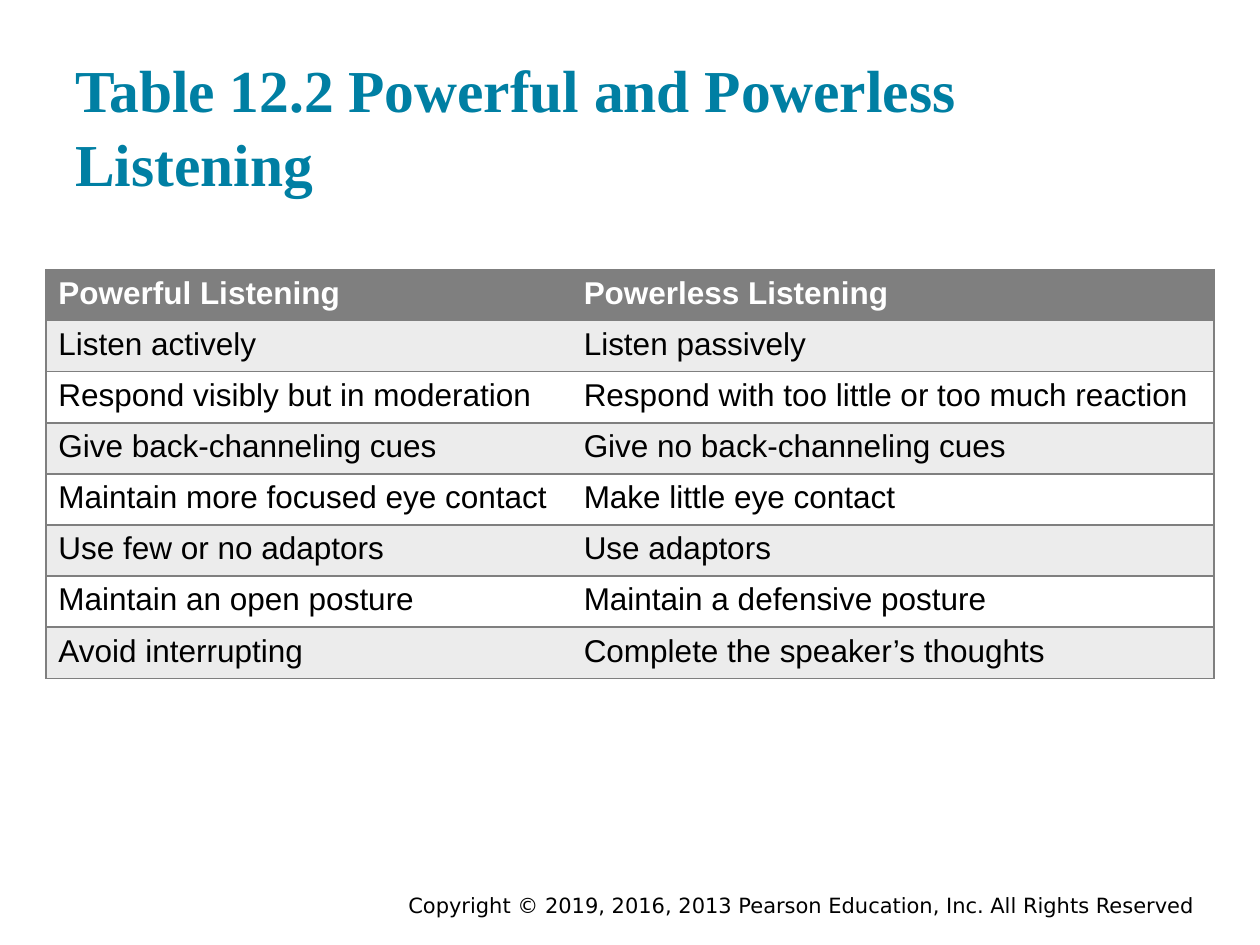
from lxml.etree import SubElement
from pptx import Presentation
from pptx.dml.color import RGBColor
from pptx.enum.text import MSO_ANCHOR, PP_ALIGN
from pptx.oxml.ns import qn
from pptx.util import Pt

COLORS = {
    "title": "007FA3",
    "text": "000000",
    "header": "7F7F7F",
    "band": "ECECEC",
    "white": "FFFFFF",
}

ROWS = [
    ("Powerful Listening", "Powerless Listening"),
    ("Listen actively", "Listen passively"),
    ("Respond visibly but in moderation", "Respond with too little or too much reaction"),
    ("Give back-channeling cues", "Give no back-channeling cues"),
    ("Maintain more focused eye contact", "Make little eye contact"),
    ("Use few or no adaptors", "Use adaptors"),
    ("Maintain an open posture", "Maintain a defensive posture"),
    ("Avoid interrupting", "Complete the speaker’s thoughts"),
]


def color(name):
    """Return the named colour."""
    return RGBColor.from_string(COLORS[name])


def add_run(paragraph, text, font_name, size, color_name, bold=False):
    """Add one formatted run to a paragraph."""
    run = paragraph.add_run()
    run.text = text
    run.font.name = font_name
    run.font.size = Pt(size)
    run.font.bold = bold
    run.font.color.rgb = color(color_name)


def add_text_box(slide, box, top_inset):
    """Add a wrapping text box and return its first paragraph."""
    shape = slide.shapes.add_textbox(*(Pt(length) for length in box))
    frame = shape.text_frame
    frame.word_wrap = True
    frame.vertical_anchor = MSO_ANCHOR.TOP
    frame.margin_top = Pt(top_inset)
    return frame.paragraphs[0]


def add_title(slide, box):
    """Place the slide title."""
    paragraph = add_text_box(slide, box, 10.5)
    paragraph.line_spacing = 1.04
    add_run(paragraph, "Table 12.2 Powerful and Powerless Listening",
            "Times New Roman", 34, "title", bold=True)


def add_copyright(slide, box):
    """Place the right-aligned copyright line."""
    paragraph = add_text_box(slide, box, 3.6)
    paragraph.alignment = PP_ALIGN.RIGHT
    add_run(paragraph, "Copyright © 2019, 2016, 2013 Pearson Education, Inc. All Rights Reserved",
            "DejaVu Sans", 12, "text")


def set_borders(cell, visible_sides):
    """Draw grey lines on the given sides and clear the others."""
    properties = cell._tc.get_or_add_tcPr()
    for position, side in enumerate(("lnL", "lnR", "lnT", "lnB")):
        line = SubElement(properties, qn(f"a:{side}"), w=str(Pt(1)))
        properties.remove(line)
        properties.insert(position, line)
        if side in visible_sides:
            fill = SubElement(line, qn("a:solidFill"))
            SubElement(fill, qn("a:srgbClr"), val=COLORS["header"])
        else:
            SubElement(line, qn("a:noFill"))


def add_listening_table(slide, box, column_widths):
    """Place the comparison table with equal rows and alternating fills."""
    shape = slide.shapes.add_table(len(ROWS), len(column_widths), *(Pt(length) for length in box))
    table = shape.table
    table.first_row = True
    table.horz_banding = False
    for column, width in zip(table.columns, column_widths):
        column.width = Pt(width)
    for row_index, texts in enumerate(ROWS):
        table.rows[row_index].height = Pt(box[3] / len(ROWS))
        is_header = row_index == 0
        fill_name = "header" if is_header else "band" if row_index % 2 else "white"
        for column_index, text in enumerate(texts):
            cell = table.cell(row_index, column_index)
            cell.fill.solid()
            cell.fill.fore_color.rgb = color(fill_name)
            add_run(cell.text_frame.paragraphs[0], text, "Arial", 18,
                    "white" if is_header else "text", bold=is_header)
            outer_side = "lnL" if column_index == 0 else "lnR"
            set_borders(cell, (outer_side, "lnT", "lnB"))


def main():
    """Build and save the presentation."""
    presentation = Presentation()
    presentation.slide_width = Pt(720)
    presentation.slide_height = Pt(540)
    slide = presentation.slides.add_slide(presentation.slide_layouts[6])
    add_copyright(slide, (126, 506.2, 563.8, 15.8))
    add_title(slide, (36, 18, 648, 84))
    add_listening_table(slide, (26.2, 154, 667.4, 233.6), (300.2, 367.2))
    presentation.save("out.pptx")


if __name__ == "__main__":
    main()
